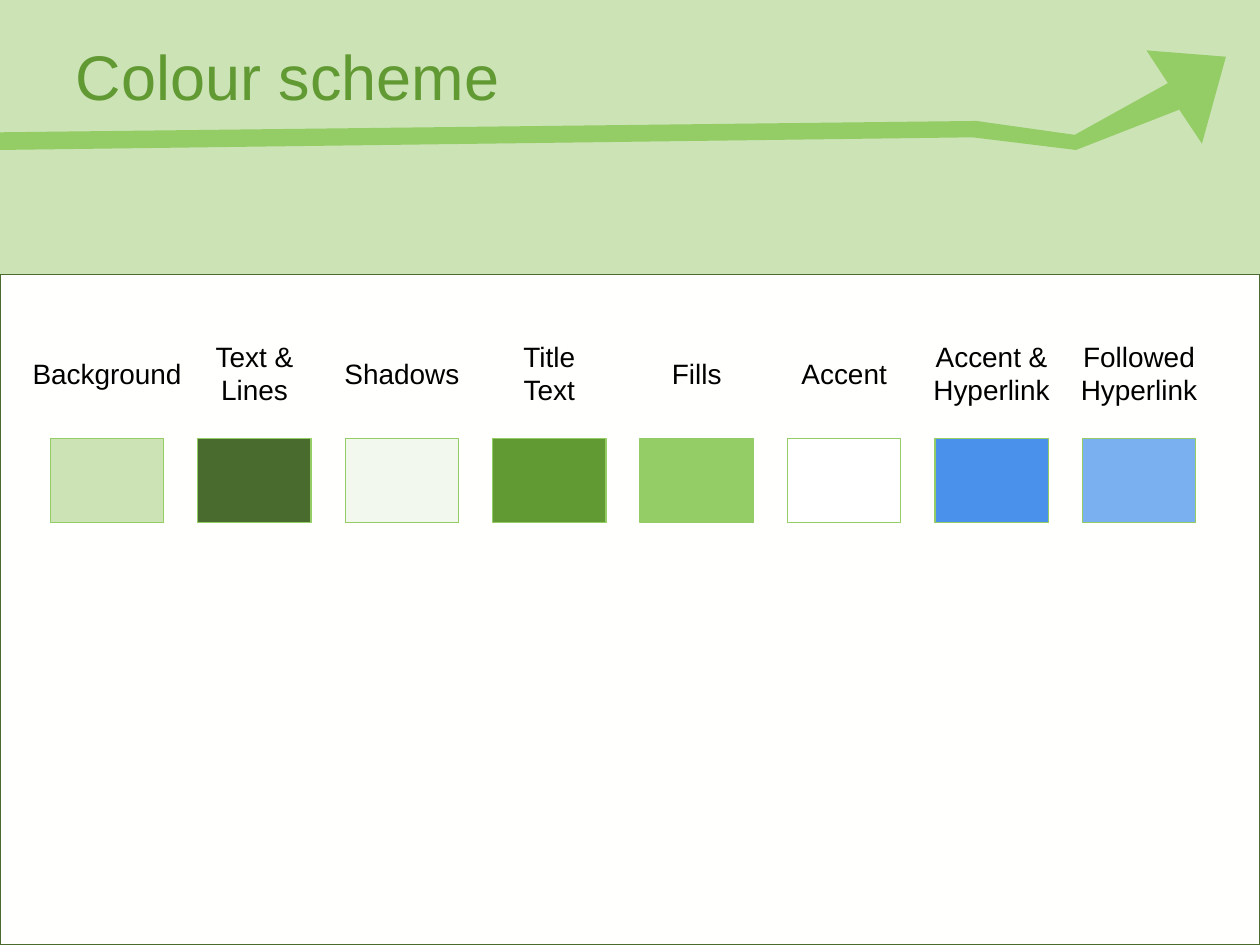
from dataclasses import dataclass

from pptx import Presentation
from pptx.dml.color import RGBColor
from pptx.enum.shapes import MSO_SHAPE
from pptx.enum.text import MSO_ANCHOR, PP_ALIGN
from pptx.slide import Slide
from pptx.util import Inches, Pt

RECTANGLE = MSO_SHAPE.RECTANGLE
MIDDLE = MSO_ANCHOR.MIDDLE
LEFT, CENTER = PP_ALIGN.LEFT, PP_ALIGN.CENTER

COLORS = {
    "background": "CCE3B5",
    "lines": "496B2E",
    "shadows": "F2F8ED",
    "title": "619933",
    "fills": "94CC66",
    "accent": "FFFFFF",
    "hyperlink": "4991EA",
    "followed": "7AAFF0",
    "panel": "FFFFFE",
    "text": "000000",
}

SWATCHES = [
    ("background", [["Background"]]),
    ("lines", [["Text &"], ["Lines"]]),
    ("shadows", [["Shadows"]]),
    ("title", [["Title", "Text"]]),
    ("fills", [["Fills"]]),
    ("accent", [["Accent"]]),
    ("hyperlink", [["Accent &"], ["Hyperlink"]]),
    ("followed", [["Followed"], ["Hyperlink"]]),
]

ARROW = [
    (0, 1.19), (7.72, 1.09), (8.54, 1.19), (9.36, 0.87), (9.54, 1.14), (9.73, 0.45),
    (9.1, 0.4), (9.27, 0.66), (8.53, 1.07), (7.75, 0.96), (0, 1.05),
]


def color(name):
    return RGBColor.from_string(COLORS[name])


@dataclass
class SchemeSlide:
    slide: Slide
    font: str = "Arial"
    grid_left: float = 0.4
    column: float = 1.17
    swatch_width: float = 0.9
    swatch_top: float = 3.48
    swatch_height: float = 0.67
    label_top: float = 2.64
    label_width: float = 1.3
    label_height: float = 0.64

    def paint(self, shape, fill, line=None):
        shape.shadow.inherit = False
        shape.fill.solid()
        shape.fill.fore_color.rgb = color(fill)
        if line:
            shape.line.color.rgb = color(line)
            shape.line.width = Pt(0.75)
        else:
            shape.line.fill.background()

    def backdrop(self, fill):
        self.slide.background.fill.solid()
        self.slide.background.fill.fore_color.rgb = color(fill)

    def span(self, para, text, size, fill):
        span = para.add_run()
        span.text = text
        span.font.name = self.font
        span.font.size = Pt(size)
        span.font.color.rgb = color(fill)

    def title(self, text, left, top, width, height):
        box = self.slide.shapes.title
        box.left, box.top, box.width, box.height = map(Inches, (left, top, width, height))
        box.text_frame.vertical_anchor = MIDDLE
        para = box.text_frame.paragraphs[0]
        para.alignment = LEFT
        self.span(para, text, 36, "title")

    def arrow(self, points, fill):
        builder = self.slide.shapes.build_freeform(
            round(points[0][0] * 100), round(points[0][1] * 100), scale=Inches(0.01))
        builder.add_line_segments([(round(x * 100), round(y * 100)) for x, y in points[1:]])
        self.paint(builder.convert_to_shape(), fill)

    def rectangle(self, left, top, width, height, fill, line):
        box = self.slide.shapes.add_shape(
            RECTANGLE, *map(Inches, (left, top, width, height)))
        self.paint(box, fill, line)

    def swatch(self, index, fill):
        self.rectangle(self.grid_left + index * self.column, self.swatch_top,
                       self.swatch_width, self.swatch_height, fill, "fills")

    def label(self, index, paragraphs):
        center = self.grid_left + index * self.column + self.swatch_width / 2
        box = self.slide.shapes.add_textbox(
            Inches(center - self.label_width / 2), Inches(self.label_top),
            Inches(self.label_width), Inches(self.label_height))
        frame = box.text_frame
        frame.word_wrap = False
        frame.vertical_anchor = MIDDLE
        frame.margin_left = frame.margin_right = 0
        for number, lines in enumerate(paragraphs):
            para = frame.add_paragraph() if number else frame.paragraphs[0]
            para.alignment = CENTER
            for position, line in enumerate(lines):
                if position:
                    para.add_line_break()
                self.span(para, line, 16, "text")


def main():
    deck = Presentation()
    deck.slide_width, deck.slide_height = Inches(10), Inches(7.5)
    page = SchemeSlide(deck.slides.add_slide(deck.slide_layouts[5]))
    page.backdrop("background")
    page.arrow(ARROW, "fills")
    page.title("Colour scheme", 0.5, 0.28, 9.07, 0.63)
    page.rectangle(0, 2.18, 10, 5.32, "panel", "lines")
    for index, (fill, paragraphs) in enumerate(SWATCHES):
        page.swatch(index, fill)
        page.label(index, paragraphs)
    deck.save("out.pptx")


if __name__ == "__main__":
    main()
